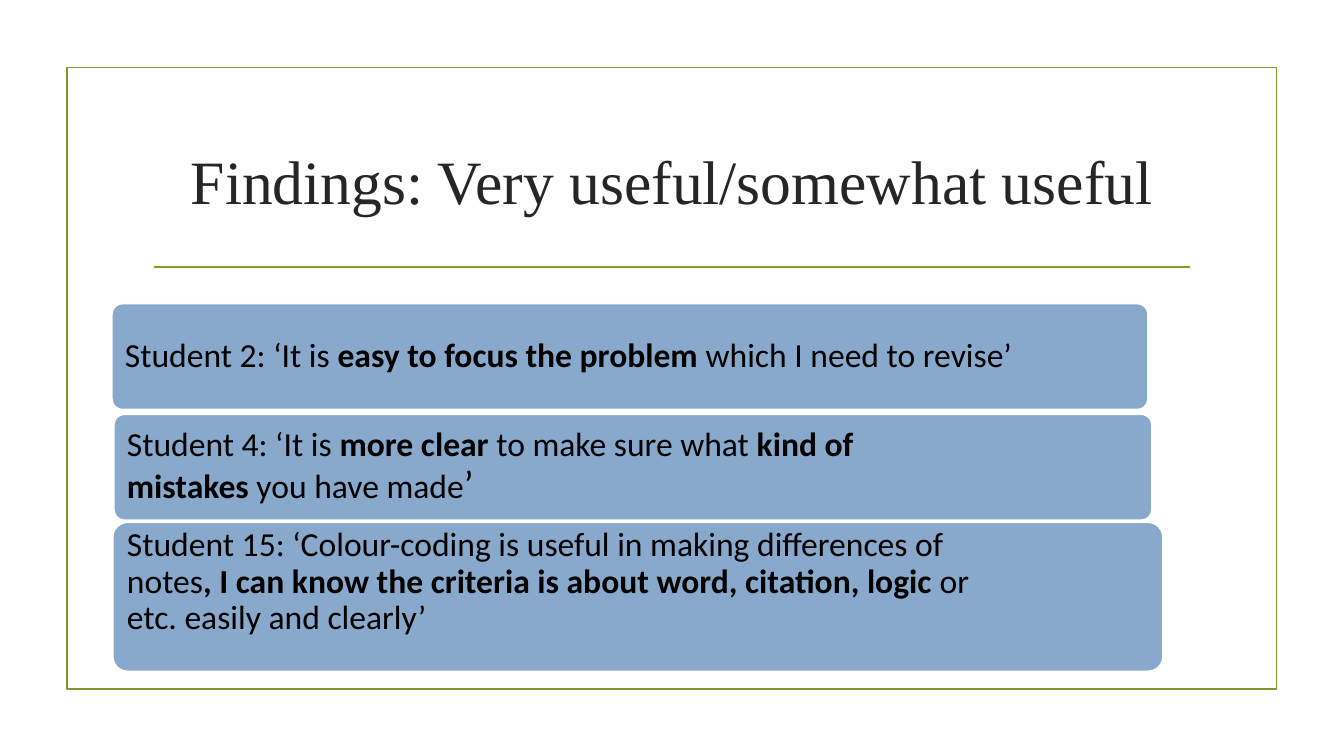
import pptx
import pptx.util
import pptx.dml.color
import pptx.enum.shapes
import pptx.enum.text
import pptx.oxml
import pptx.oxml.ns
from dataclasses import dataclass

Cm, Pt = pptx.util.Cm, pptx.util.Pt
RGB = pptx.dml.color.RGBColor.from_string
Shape = pptx.enum.shapes.MSO_SHAPE
Align = pptx.enum.text.PP_ALIGN
Anchor = pptx.enum.text.MSO_ANCHOR


@dataclass
class Theme:
    green: str = "83992A"
    blue: str = "88A9CB"
    white: str = "FFFFFF"
    black: str = "000000"
    dark: str = "262626"
    head: str = "Times New Roman"
    body: str = "Calibri"
    title: int = 44
    quote: int = 24
    large: int = 28
    line: float = 1.25


class Deck:
    def __init__(self, theme):
        self.theme = theme
        self.file = pptx.Presentation()
        self.file.slide_width, self.file.slide_height = Cm(33.87), Cm(19.05)
        self.slide = self.file.slides.add_slide(self.file.slide_layouts[6])

    def stroke(self, line, color):
        line.color.rgb = RGB(color)
        line.width = Pt(self.theme.line)

    def block(self, kind, box, color):
        shape = self.slide.shapes.add_shape(kind, *map(Cm, box))
        shape.shadow.inherit = False
        self.stroke(shape.line, color)
        return shape

    def frame(self, *box):
        self.block(Shape.RECTANGLE, box, self.theme.green).fill.background()

    def rule(self, left, right, top):
        line = self.slide.shapes.add_connector(
            pptx.enum.shapes.MSO_CONNECTOR.STRAIGHT,
            Cm(left), Cm(top), Cm(right), Cm(top))
        self.stroke(line.line, self.theme.green)
        props = line._element.spPr
        props.append(pptx.oxml.parse_xml(
            "<a:effectLst %s/>" % pptx.oxml.ns.nsdecls("a")))

    def font(self, para, name, size, color):
        para.font.name, para.font.size = name, Pt(size)
        para.font.color.rgb = RGB(color)

    def title(self, text, *box):
        area = self.slide.shapes.add_textbox(*map(Cm, box)).text_frame
        area.word_wrap = True
        area.vertical_anchor = Anchor.MIDDLE
        para = area.paragraphs[0]
        para.text, para.alignment = text, Align.CENTER
        self.font(para, self.theme.head, self.theme.title, self.theme.dark)

    def card(self, box, insets, parts):
        """Parts are (text, style); style is "", "bold" or "large"."""
        shape = self.block(Shape.ROUNDED_RECTANGLE, box, self.theme.white)
        shape.adjustments[0] = 0.1
        shape.fill.solid()
        shape.fill.fore_color.rgb = RGB(self.theme.blue)
        area = shape.text_frame
        area.word_wrap = True
        area.vertical_anchor = Anchor.MIDDLE
        (area.margin_left, area.margin_top,
         area.margin_right, area.margin_bottom) = map(Cm, insets)
        para = area.paragraphs[0]
        para.alignment, para.line_spacing = Align.LEFT, 0.9
        self.font(para, self.theme.body, self.theme.quote, self.theme.black)
        for text, style in parts:
            run = para.add_run()
            run.text = text
            if style == "bold":
                run.font.bold = True
            elif style == "large":
                run.font.size = Pt(self.theme.large)


def main():
    deck = Deck(Theme())

    # Border, title and rule
    deck.frame(1.69, 1.7, 30.48, 15.67)
    deck.rule(3.89, 30, 6.73)
    deck.title("Findings: Very useful/somewhat useful", 3.61, 2.72, 26.67, 3.63)

    # Student quotes: box, insets (left, top, right, bottom), text
    quotes = [
        ((2.82, 7.65, 26.11, 2.67), (0.25, 0.25, 3.09, 0.25),
         [("Student 2: ‘It is ", ""),
          ("easy to focus the problem ", "bold"),
          ("which I need to revise’", "")]),
        ((2.87, 10.44, 26.16, 2.67), (0.25, 0.25, 4.36, 0.25),
         [("Student 4: ‘It is ", ""),
          ("more clear ", "bold"),
          ("to make sure what ", ""),
          ("kind of mistakes", "bold"),
          (" you have made", ""),
          ("’", "large")]),
        ((2.84, 13.16, 26.47, 3.76), (0.25, 0, 4.43, 0.74),
         [("Student 15: ‘Colour-coding is useful in making differences of notes", ""),
          (", I can know the criteria is about word, citation, logic", "bold"),
          (" or etc. easily and clearly’", "")]),
    ]
    for box, insets, parts in quotes:
        deck.card(box, insets, parts)

    deck.file.save("out.pptx")


if __name__ == "__main__":
    main()
